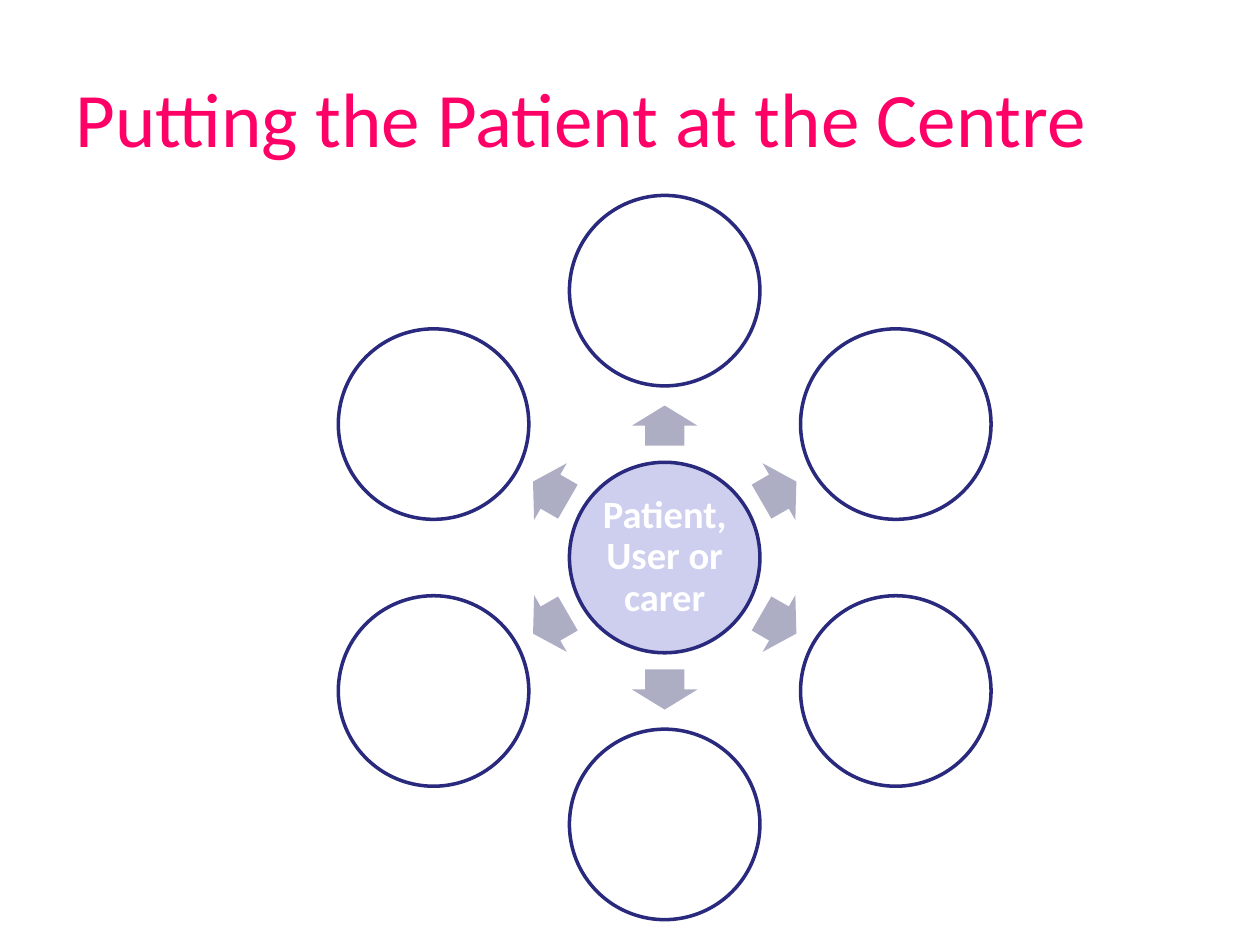
import math

import pptx
import pptx.dml.color
import pptx.enum.shapes
import pptx.enum.text
import pptx.util

Cm = pptx.util.Cm
Pt = pptx.util.Pt
RGBColor = pptx.dml.color.RGBColor
MSO_SHAPE = pptx.enum.shapes.MSO_SHAPE
MSO_ANCHOR = pptx.enum.text.MSO_ANCHOR
PP_ALIGN = pptx.enum.text.PP_ALIGN

PINK = RGBColor(0xFF, 0x00, 0x66)
NAVY = RGBColor(0x29, 0x29, 0x7D)
LILAC = RGBColor(0xCE, 0xCE, 0xEF)
GREY = RGBColor(0xAD, 0xAD, 0xC4)
WHITE = RGBColor(0xFF, 0xFF, 0xFF)

FONT = "Calibri"
HUB_X, HUB_Y = 13.4, 11.24
CIRCLE_SIZE = 3.84
ARROW_LENGTH, ARROW_WIDTH = 0.81, 1.32
ARROW_RADIUS, CIRCLE_RADIUS = 2.66, 5.38
SPOKES = 6


def add_run(p, text, size, color, bold=False):
    r = p.add_run()
    r.text = text
    r.font.name = FONT
    r.font.size = Pt(size)
    r.font.bold = bold
    r.font.color.rgb = color


def add_title(s, text):
    tf = s.shapes.add_textbox(Cm(1.27), Cm(0.76), Cm(22.86), Cm(3.18)).text_frame
    tf.word_wrap = True
    tf.vertical_anchor = MSO_ANCHOR.MIDDLE
    add_run(tf.paragraphs[0], text, 44, PINK)


def add_centred(s, kind, x, y, width, height, fill):
    sp = s.shapes.add_shape(
        kind, Cm(x - width / 2), Cm(y - height / 2), Cm(width), Cm(height))
    sp.shadow.inherit = False
    sp.fill.solid()
    sp.fill.fore_color.rgb = fill
    return sp


def add_circle(s, x, y, fill):
    sp = add_centred(s, MSO_SHAPE.OVAL, x, y, CIRCLE_SIZE, CIRCLE_SIZE, fill)
    sp.line.color.rgb = NAVY
    sp.line.width = Pt(2)
    return sp


def add_arrow(s, x, y, angle):
    sp = add_centred(
        s, MSO_SHAPE.RIGHT_ARROW, x, y, ARROW_LENGTH, ARROW_WIDTH, GREY)
    sp.line.fill.background()
    sp.adjustments[0] = 0.6
    sp.adjustments[1] = 0.5
    sp.rotation = angle


def add_hub(s, text):
    tf = add_circle(s, HUB_X, HUB_Y, LILAC).text_frame
    tf.word_wrap = True
    tf.vertical_anchor = MSO_ANCHOR.MIDDLE
    tf.margin_left = tf.margin_right = tf.margin_top = tf.margin_bottom = Cm(0.08)
    p = tf.paragraphs[0]
    p.alignment = PP_ALIGN.CENTER
    p.line_spacing = 0.9
    add_run(p, text, 22, WHITE, bold=True)


def spoke_point(radius, angle):
    a = math.radians(angle)
    return HUB_X + radius * math.cos(a), HUB_Y + radius * math.sin(a)


def main():
    """Build the slide with a central hub and a ring of circles."""
    prs = pptx.Presentation()
    prs.slide_width, prs.slide_height = Cm(25.4), Cm(19.05)
    s = prs.slides.add_slide(prs.slide_layouts[6])
    add_title(s, "Putting the Patient at the Centre")
    add_hub(s, "Patient, User or carer")
    for i in range(SPOKES):
        angle = (270 + i * 360 / SPOKES) % 360
        add_arrow(s, *spoke_point(ARROW_RADIUS, angle), angle)
        add_circle(s, *spoke_point(CIRCLE_RADIUS, angle), WHITE)
    prs.save("out.pptx")


if __name__ == "__main__":
    main()
